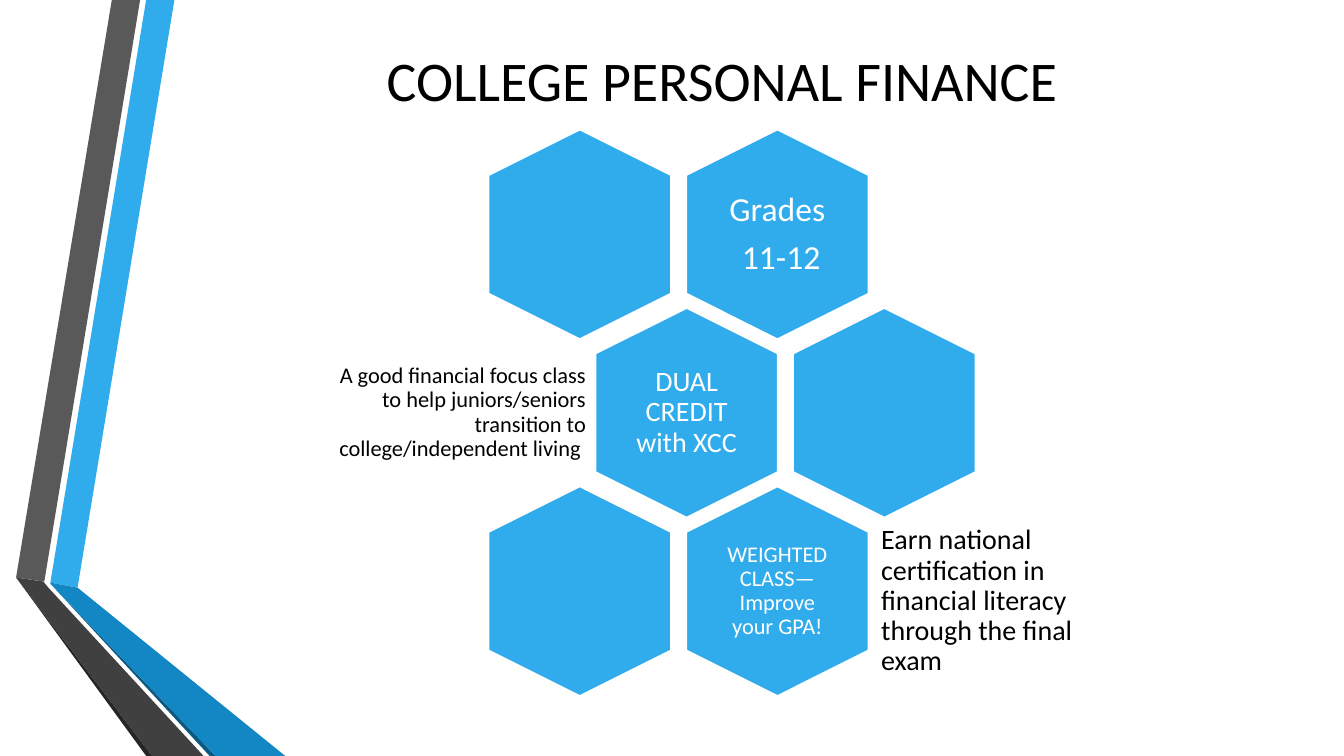
from pptx import Presentation
from pptx.dml.color import RGBColor
from pptx.enum import shapes, text
from pptx.util import Inches, Pt

# Content
TITLE = "COLLEGE PERSONAL FINANCE"
# (row, column, paragraphs, type size, inset)
HEXAGONS = [
    (0, 0, [], None, None),
    (0, 1, ["Grades", " 11-12"], "large", 0.1),
    (1, 0, ["DUAL CREDIT with XCC"], "medium", 0.08),
    (1, 1, [], None, None),
    (2, 0, [], None, None),
    (2, 1, ["WEIGHTED CLASS—Improve your GPA!"], "small", 0.07),
]
# (box, paragraphs, type size, inset, alignment)
SIDE_NOTES = [
    ((3.29, 3.38, 2.59, 1.43),
     ["A good financial focus class to help juniors/seniors transition to "
      "college/independent living "], "small", 0.07, "RIGHT"),
    ((8.66, 5.34, 2.33, 1.25),
     ["Earn national certification in financial literacy through the final exam"],
     "medium", 0.08, "LEFT"),
]
# (colour, corner points)
RIBBONS = [
    ("blue", [(0.5, 5.78), (0.77, 5.83), (1.73, 0), (1.45, 0)]),
    ("grey", [(1.39, 0), (1.11, 0), (0.16, 5.73), (0.44, 5.77)]),
    ("grey_edge", [(0.16, 5.73), (1.45, 7.5), (1.51, 7.5)]),
    ("blue_edge", [(0.5, 5.79), (2.08, 7.5), (2.14, 7.5)]),
    ("blue_fold", [(0.5, 5.79), (2.14, 7.5), (2.83, 7.5), (0.77, 5.83), (0.5, 5.78)]),
    ("grey_fold", [(2.02, 7.5), (0.48, 5.83), (0.43, 5.77), (0.16, 5.73), (1.51, 7.5)]),
]

THEME = {
    "font": "Calibri",
    "colors": {"blue": "30ACEC", "blue_fold": "1287C3", "blue_edge": "0C5A82",
               "grey": "595959", "grey_fold": "404040", "grey_edge": "262626",
               "white": "FFFFFF", "black": "000000"},
    "sizes": {"title": 40, "large": 24, "medium": 20, "small": 16},
}

# Honeycomb geometry
HEX_LENGTH, HEX_WIDTH = 2.08, 1.81
GRID_LEFT, GRID_TOP = 4.71, 1.42
COLUMN_STEP, ROW_STEP, ROW_SHIFT = 1.96, 1.77, 1.06
LABEL_WIDTH, LABEL_HEIGHT = 1.25, 1.43


def color(name):
    return RGBColor.from_string(THEME["colors"][name])


def paint(shape, fill, line=None):
    shape.shadow.inherit = False
    shape.fill.solid()
    shape.fill.fore_color.rgb = color(fill)
    if line:
        shape.line.color.rgb = color(line)
        shape.line.width = Pt(1.25)
    else:
        shape.line.fill.background()


def add_text(slide, box, paragraphs, size, inset, ink, align="CENTER", spacing=0.9):
    frame = slide.shapes.add_textbox(*map(Inches, box)).text_frame
    frame.word_wrap = True
    frame.vertical_anchor = text.MSO_ANCHOR.MIDDLE
    for side in ("left", "top", "right", "bottom"):
        setattr(frame, f"margin_{side}", Inches(inset))
    points = THEME["sizes"][size]
    paragraph_format = {"alignment": getattr(text.PP_ALIGN, align),
                        "line_spacing": spacing, "space_after": Pt(points * 0.35)}
    for index, words in enumerate(paragraphs):
        paragraph = frame.add_paragraph() if index else frame.paragraphs[0]
        for name, value in paragraph_format.items():
            setattr(paragraph, name, value)
        run = paragraph.add_run()
        run.text = words
        run.font.name = THEME["font"]
        run.font.size = Pt(points)
        run.font.color.rgb = color(ink)


def add_ribbon(slide, fill, corners):
    start, *others = [(Inches(x), Inches(y)) for x, y in corners]
    builder = slide.shapes.build_freeform(*start)
    builder.add_line_segments(others, close=True)
    paint(builder.convert_to_shape(), fill)


def add_hexagon(slide, row, column, paragraphs, size, inset):
    left = GRID_LEFT + column * COLUMN_STEP + row % 2 * ROW_SHIFT
    top = GRID_TOP + row * ROW_STEP
    hexagon = slide.shapes.add_shape(
        shapes.MSO_SHAPE.HEXAGON, Inches(left), Inches(top),
        Inches(HEX_LENGTH), Inches(HEX_WIDTH))
    hexagon.rotation = 90
    hexagon.adjustments[0] = 0.25
    paint(hexagon, "blue", "white")
    if paragraphs:
        box = (left + (HEX_LENGTH - LABEL_WIDTH) / 2,
               top + (HEX_WIDTH - LABEL_HEIGHT) / 2, LABEL_WIDTH, LABEL_HEIGHT)
        add_text(slide, box, paragraphs, size, inset, "white")


def main():
    presentation = Presentation()
    presentation.slide_width = Inches(13.33)
    presentation.slide_height = Inches(7.5)
    slide = presentation.slides.add_slide(presentation.slide_layouts[6])

    # Folded ribbons on the left
    for fill, corners in RIBBONS:
        add_ribbon(slide, fill, corners)

    # Title
    add_text(slide, (1.68, 0.21, 10.96, 1.16), [TITLE], "title", 0.05, "black", spacing=1.0)

    # Honeycomb and its side notes
    for hexagon in HEXAGONS:
        add_hexagon(slide, *hexagon)
    for box, paragraphs, size, inset, align in SIDE_NOTES:
        add_text(slide, box, paragraphs, size, inset, "black", align)

    presentation.save("out.pptx")


if __name__ == "__main__":
    main()
